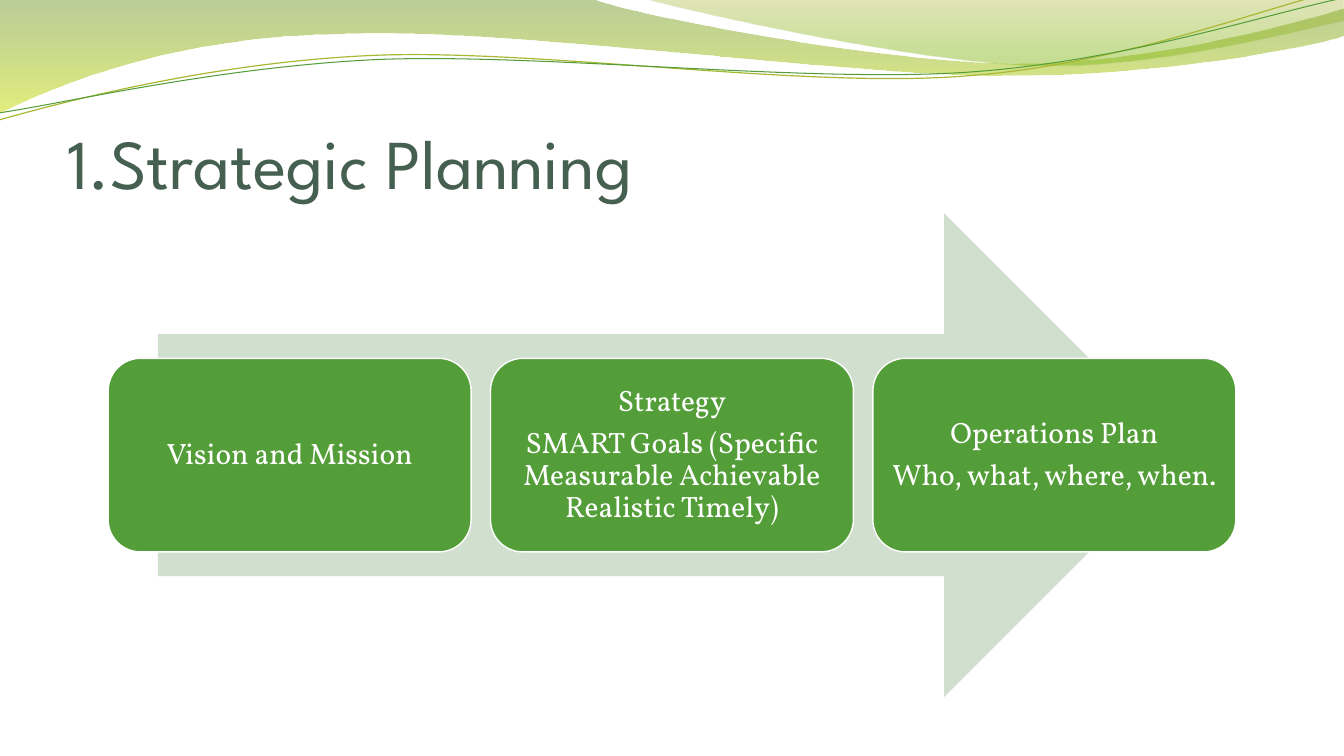
from dataclasses import dataclass

from lxml import etree
from pptx import Presentation
from pptx.dml.color import RGBColor
from pptx.enum.shapes import MSO_SHAPE
from pptx.enum.text import MSO_ANCHOR, PP_ALIGN
from pptx.oxml.ns import qn
from pptx.shapes.autoshape import Shape
from pptx.slide import Slide
from pptx.text.text import TextFrame
from pptx.util import Inches, Pt

ARROW, CARD = MSO_SHAPE.RIGHT_ARROW, MSO_SHAPE.ROUNDED_RECTANGLE
MIDDLE, BOTTOM = MSO_ANCHOR.MIDDLE, MSO_ANCHOR.BOTTOM
CENTER, LEFT = PP_ALIGN.CENTER, PP_ALIGN.LEFT

SLIDE_WIDTH, SLIDE_HEIGHT = Inches(13.33), Inches(7.5)
COLUMN, ROW = SLIDE_WIDTH / 40, SLIDE_HEIGHT / 75
DOWNWARD = 270

Point = tuple[float, float]
Chain = tuple[Point, ...]


@dataclass(frozen=True)
class Theme:
    title_font: str = "League Spartan"
    body_font: str = "Vollkorn"
    title_size: float = 50
    body_size: float = 21
    title: str = "455F51"
    card: str = "549E39"
    arrow: str = "D1DFCE"
    white: str = "FFFFFF"
    olive: str = "A9B733"


THEME = Theme()


@dataclass(frozen=True)
class Area:
    """A rectangle in grid columns and rows."""
    left: float
    top: float
    width: float
    height: float

    def emu(self) -> tuple[int, int, int, int]:
        return (round(self.left * COLUMN), round(self.top * ROW),
                round(self.width * COLUMN), round(self.height * ROW))


@dataclass(frozen=True)
class Stop:
    position: float
    color: str
    opacity: int


@dataclass(frozen=True)
class Wave:
    chains: tuple[Chain, ...]
    stops: tuple[Stop, Stop]


@dataclass(frozen=True)
class Strand:
    chain: Chain
    color: str
    weight: float


WAVES = (
    Wave((((17.61, -0.1), (19.02, 1.7), (26.52, 6.3), (30.33, 6.3),
           (34.11, 6.3), (38.31, 2.6), (39.99, 0.9)),
          ((40.02, 3.6), (39.33, 4.4), (34.77, 7.6), (29.82, 7.5),
           (24.87, 7.5), (15.27, 2.8), (10.29, 3.4),
           (5.16, 3.6), (1.83, 8.3), (-0.06, 11.3)),
          ((0, 0),)),
         (Stop(0, "69921C", 45), Stop(1, "CCE10F", 55))),
    Wave((((19.14, -0.1), (20.37, 1.1), (27.27, 6.2), (30.75, 6.5),
           (34.2, 6.9), (38.46, 3.2), (39.99, 2.1)),
          ((39.99, 0),)),
         (Stop(0, "9BAA1A", 30), Stop(0.8, "81BA16", 45))),
)
STRANDS = (
    Strand(((-0.03, 11.9), (1.89, 10.1), (6.3, 6.2), (11.07, 5.5),
            (15.81, 4.8), (23.67, 8.7), (28.47, 7.6),
            (33.3, 6.6), (37.53, 0.8), (39.9, -1)), THEME.olive, 0.85),
    Strand(((-0.03, 11.2), (1.86, 10.3), (6.54, 6.6), (11.31, 5.9),
            (16.11, 5.3), (23.88, 8.2), (28.65, 7.2),
            (33.42, 6.2), (37.65, 1.4), (39.99, -0.2)), THEME.card, 0.75),
)
TITLE_AREA = Area(2, 7.7, 36, 12.5)
DIAGRAM = Area(2, 21.15, 36, 48)
CARD_GAP = 0.58
CARDS = (
    ("Vision and Mission",),
    ("Strategy", "SMART Goals (Specific Measurable Achievable Realistic Timely)"),
    ("Operations Plan", "Who, what, where, when."),
)


def rgb(color: str) -> RGBColor:
    return RGBColor.from_string(color)


def bend(outline: Shape, chains: tuple[Chain, ...]) -> None:
    """Merge each three line segments of a chain into one cubic curve."""
    nodes = list(outline.element.iter(qn("a:moveTo"), qn("a:lnTo")))
    start = 0
    for chain in chains:
        for first in range(start + 1, start + len(chain), 3):
            curve, *others = nodes[first:first + 3]
            curve.tag = qn("a:cubicBezTo")
            for node in others:
                curve.append(node[0])
                node.getparent().remove(node)
        start += len(chain)


def add_outline(page: Slide, chains: tuple[Chain, ...], close: bool) -> Shape:
    points = [(x * COLUMN, y * ROW) for chain in chains for x, y in chain]
    builder = page.shapes.build_freeform(*points[0])
    builder.add_line_segments(points[1:], close=close)
    outline = builder.convert_to_shape()
    outline.shadow.inherit = False
    bend(outline, chains)
    return outline


def add_wave(page: Slide, wave: Wave) -> None:
    shape = add_outline(page, wave.chains, close=True)
    shape.line.fill.background()
    shape.fill.gradient()
    shape.fill.gradient_angle = DOWNWARD
    for target, stop in zip(shape.fill.gradient_stops, wave.stops):
        target.position = stop.position
        target.color.rgb = rgb(stop.color)
    colors = shape.element.spPr.iter(qn("a:srgbClr"))
    for color, stop in zip(list(colors), wave.stops):
        etree.SubElement(color, qn("a:alpha"), val=str(stop.opacity * 1000))


def add_strand(page: Slide, strand: Strand) -> None:
    shape = add_outline(page, (strand.chain,), close=False)
    shape.fill.background()
    shape.line.color.rgb = rgb(strand.color)
    shape.line.width = Pt(strand.weight)


def add_block(page: Slide, kind: MSO_SHAPE, area: Area, color: str) -> Shape:
    block = page.shapes.add_shape(kind, *area.emu())
    block.shadow.inherit = False
    block.fill.solid()
    block.fill.fore_color.rgb = rgb(color)
    block.line.fill.background()
    return block


def add_card(page: Slide, area: Area, lines: tuple[str, ...]) -> None:
    card = add_block(page, CARD, area, THEME.card)
    card.line.color.rgb = rgb(THEME.white)
    card.line.width = Pt(1)
    frame = card.text_frame
    frame.margin_left = frame.margin_right = Inches(0.09)
    frame.margin_top = frame.margin_bottom = Inches(0.09)
    write(frame, lines, THEME.body_font, THEME.body_size, THEME.white, CENTER, MIDDLE)
    for para in frame.paragraphs:
        para.line_spacing = 0.9
        para.space_after = Pt(7.35)


def write(frame: TextFrame, lines: tuple[str, ...], font: str, size: float,
          color: str, align: PP_ALIGN, anchor: MSO_ANCHOR) -> None:
    frame.word_wrap = True
    frame.vertical_anchor = anchor
    frame.text = "\n".join(lines)
    for para in frame.paragraphs:
        para.alignment = align
        para.font.name = font
        para.font.size = Pt(size)
        para.font.color.rgb = rgb(color)


def add_title(page: Slide, text: str) -> None:
    frame = page.shapes.add_textbox(*TITLE_AREA.emu()).text_frame
    frame.margin_left = frame.margin_right = frame.margin_bottom = 0
    frame.margin_top = Inches(0.05)
    write(frame, (text,), THEME.title_font, THEME.title_size, THEME.title, LEFT, BOTTOM)


def add_diagram(page: Slide) -> None:
    """Draw the arrow with a centred row of cards across it."""
    left, top, width, height = DIAGRAM.left, DIAGRAM.top, DIAGRAM.width, DIAGRAM.height
    arrow_width = 0.85 * width
    arrow_left = left + (width - arrow_width) / 2
    add_block(page, ARROW, Area(arrow_left, top, arrow_width, height), THEME.arrow)
    card_width = 0.3 * width
    pitch = card_width + CARD_GAP
    start = left + (width - len(CARDS) * pitch + CARD_GAP) / 2
    for index, lines in enumerate(CARDS):
        area = Area(start + index * pitch, top + 0.3 * height, card_width, 0.4 * height)
        add_card(page, area, lines)


def main() -> None:
    deck = Presentation()
    deck.slide_width, deck.slide_height = SLIDE_WIDTH, SLIDE_HEIGHT
    page = deck.slides.add_slide(deck.slide_layouts[6])
    for wave in WAVES:
        add_wave(page, wave)
    for strand in STRANDS:
        add_strand(page, strand)
    add_diagram(page)
    add_title(page, "1.Strategic Planning")
    deck.save("out.pptx")


if __name__ == "__main__":
    main()
